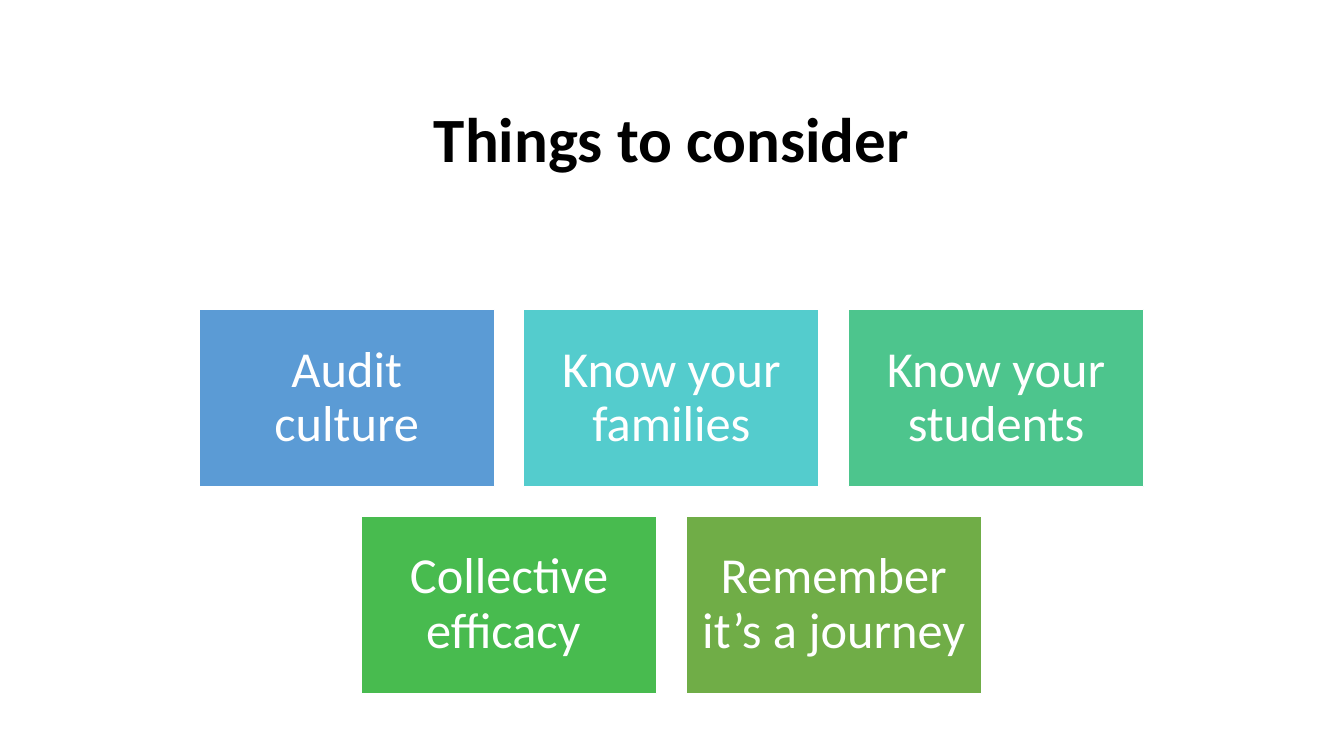
from pptx import Presentation
from pptx.dml.color import RGBColor
from pptx.enum.shapes import MSO_SHAPE
from pptx.enum.text import MSO_ANCHOR, PP_ALIGN
from pptx.util import Inches, Pt

COLORS = {
    "text": "000000",
    "white": "FFFFFF",
    "blue": "5B9BD5",
    "teal": "54CCCD",
    "mint": "4DC58D",
    "green": "48BB4F",
    "olive": "70AD47",
}
CARD_ROWS = [
    [("Audit culture", "blue"), ("Know your families", "teal"), ("Know your students", "mint")],
    [("Collective efficacy ", "green"), ("Remember it’s a journey", "olive")],
]
CARD_W, CARD_H, GAP = 2.93, 1.76, 0.29
TITLE_FONT = {"name": "Calibri", "size": Pt(45), "bold": True}
CARD_FONT = {"name": "Calibri", "size": Pt(36)}


def rgb(name):
    return RGBColor.from_string(COLORS[name])


def write_centred(sp, text, font, color, inset):
    tf = sp.text_frame
    tf.word_wrap = True
    tf.vertical_anchor = MSO_ANCHOR.MIDDLE
    for side in ("left", "top", "right", "bottom"):
        setattr(tf, f"margin_{side}", Inches(inset))
    p = tf.paragraphs[0]
    p.alignment = PP_ALIGN.CENTER
    p.line_spacing = 0.9
    r = p.add_run()
    r.text = text
    for key, value in font.items():
        setattr(r.font, key, value)
    r.font.color.rgb = rgb(color)


def add_title(slide, text, left, top, width, height):
    sp = slide.shapes.add_textbox(*map(Inches, (left, top, width, height)))
    write_centred(sp, text, TITLE_FONT, "text", 0.1)


def add_card(shapes, text, color, left, top):
    sp = shapes.add_shape(MSO_SHAPE.RECTANGLE, *map(Inches, (left, top, CARD_W, CARD_H)))
    sp.shadow.inherit = False
    sp.fill.solid()
    sp.fill.fore_color.rgb = rgb(color)
    sp.line.color.rgb = rgb("white")
    sp.line.width = Pt(1)
    write_centred(sp, text, CARD_FONT, "white", 0.15)


def add_card_rows(slide, rows, left, top, width):
    """Stack the rows of cards, each row centred in the given width."""
    group = slide.shapes.add_group_shape()
    for i, row in enumerate(rows):
        row_w = len(row) * (CARD_W + GAP) - GAP
        row_left = left + (width - row_w) / 2
        for j, (text, color) in enumerate(row):
            add_card(group.shapes, text, color,
                     row_left + j * (CARD_W + GAP), top + i * (CARD_H + GAP))


def main():
    prs = Presentation()
    prs.slide_width, prs.slide_height = Inches(13.33), Inches(7.5)
    slide = prs.slides.add_slide(prs.slide_layouts[6])
    add_title(slide, "Things to consider", 0.69, 0.69, 11.94, 1.44)
    add_card_rows(slide, CARD_ROWS, 0.69, 3.07, 11.94)
    prs.save("out.pptx")


if __name__ == "__main__":
    main()
